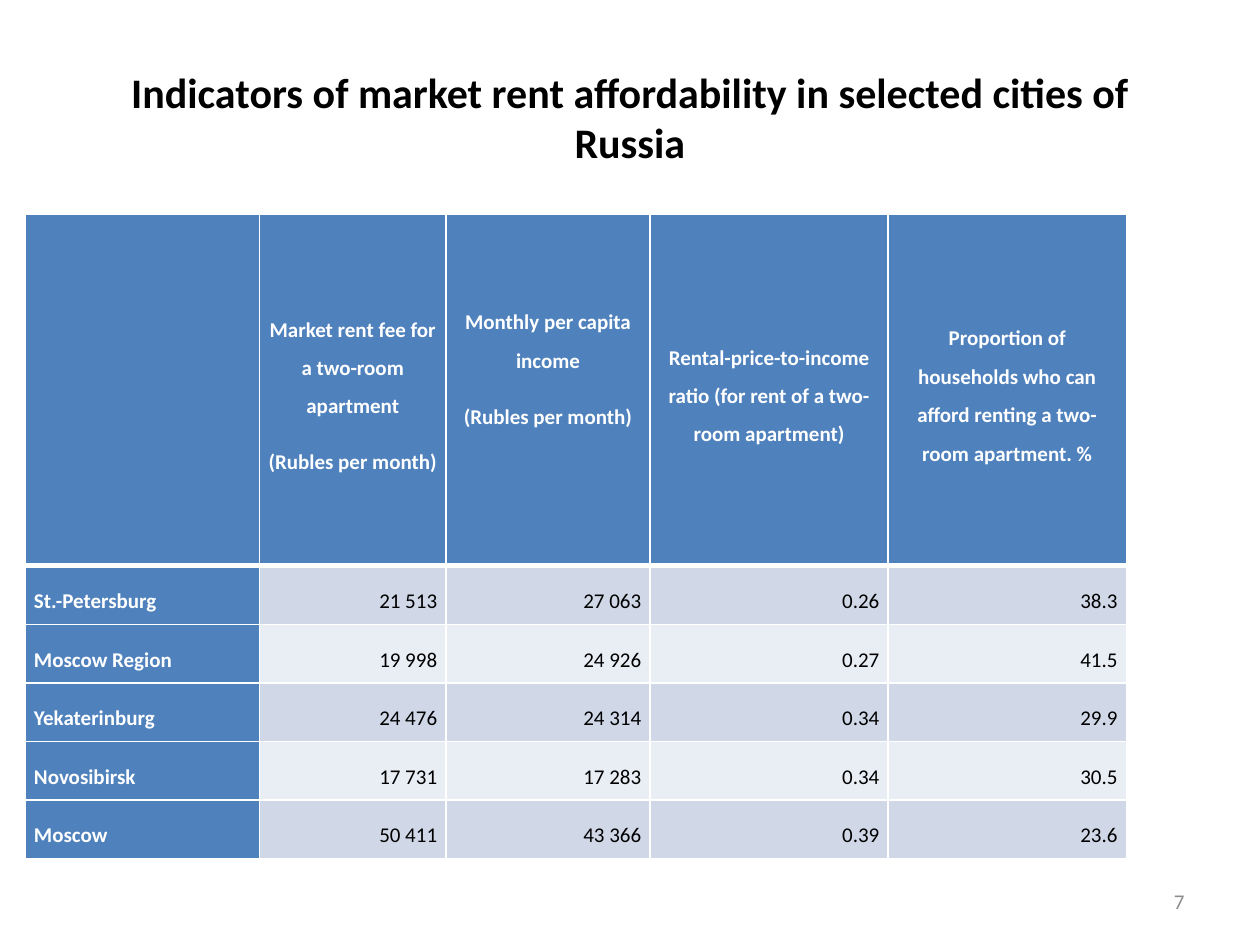
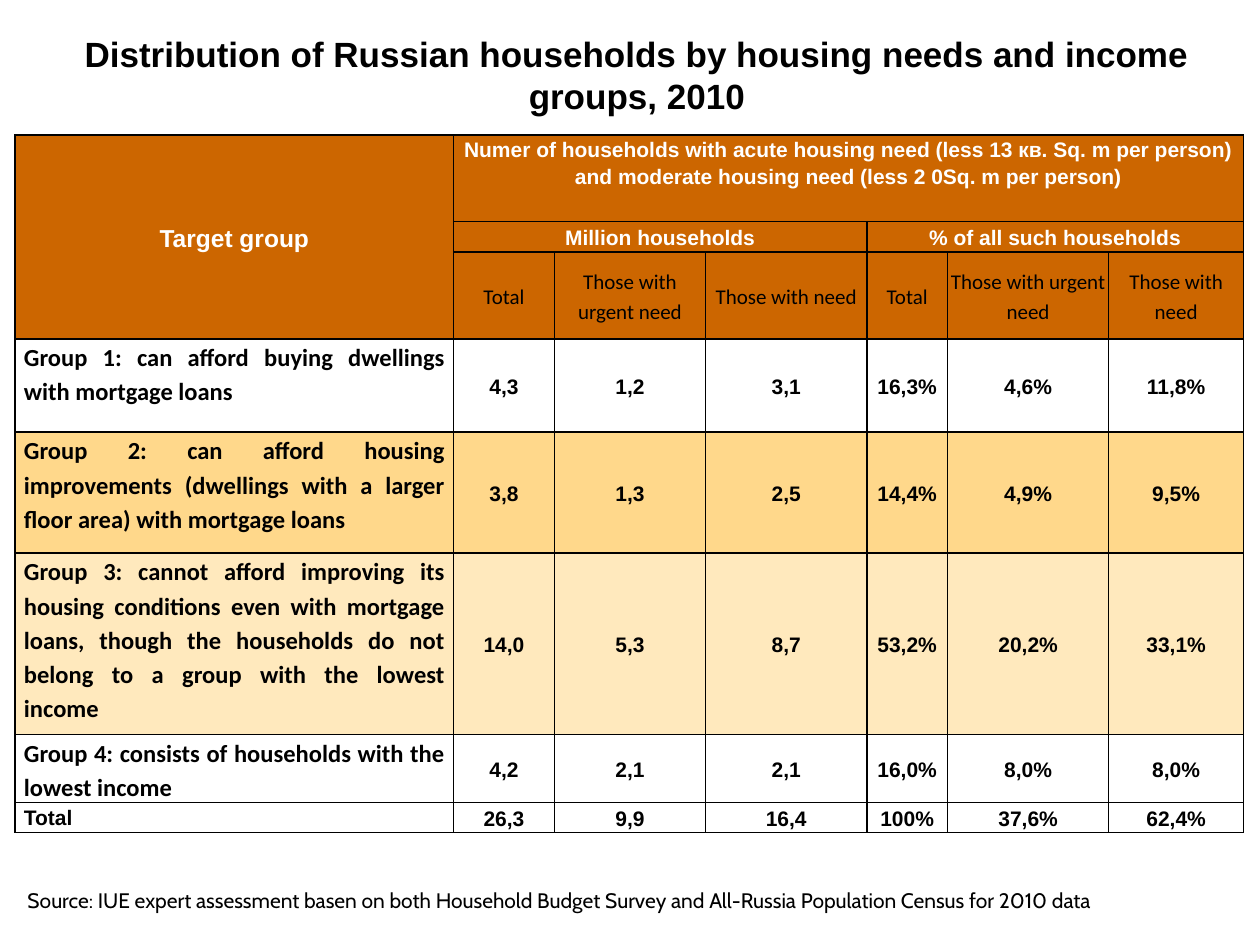
from lxml import etree
from pptx import Presentation
from pptx.dml.color import RGBColor
from pptx.enum import text as t
from pptx.oxml.ns import qn
from pptx.util import Inches, Pt

BLACK = RGBColor(0x00, 0x00, 0x00)
WHITE = RGBColor(0xFF, 0xFF, 0xFF)
GREY = RGBColor(0x8C, 0x8C, 0x8C)
BLUE = RGBColor(0x4F, 0x81, 0xBD)
BLUE_BANDS = RGBColor(0xD0, 0xD8, 0xE8), RGBColor(0xE9, 0xED, 0xF4)
ORANGE = RGBColor(0xCC, 0x66, 0x00)
AMBER = RGBColor(0xFF, 0xD8, 0x8B)
CREAM = RGBColor(0xFF, 0xE9, 0xBD)

LEFT, CENTER = t.PP_ALIGN.LEFT, t.PP_ALIGN.CENTER
RIGHT, JUSTIFY = t.PP_ALIGN.RIGHT, t.PP_ALIGN.JUSTIFY
TOP, MIDDLE = t.MSO_ANCHOR.TOP, t.MSO_ANCHOR.MIDDLE
SIDE_INSETS = (0.07, 0, 0.07, 0)
NO_INSETS = (0, 0, 0, 0)
BOX_INSETS = (0.1, 0.05, 0.1, 0.05)

# Content: rent affordability
RENT_TITLE = "Indicators of market rent affordability in selected cities of Russia"
RENT_PAGE = "7"
RENT_HEADERS = [
    (),
    ("Market rent fee for a two-room apartment", "(Rubles per month)"),
    ("Monthly per capita income", "(Rubles per month)"),
    ("Rental-price-to-income ratio (for rent of a two-room apartment)",),
    ("Proportion of households who can afford renting a two-room apartment. %",),
]
RENT_CITIES = [
    ("St.-Petersburg", "21 513", "27 063", "0.26", "38.3"),
    ("Moscow Region", "19 998", "24 926", "0.27", "41.5"),
    ("Yekaterinburg", "24 476", "24 314", "0.34", "29.9"),
    ("Novosibirsk", "17 731", "17 283", "0.34", "30.5"),
    ("Moscow", "50 411", "43 366", "0.39", "23.6"),
]
RENT_COLUMNS = [1.86, 1.48, 1.62, 1.89, 1.89]
RENT_ROWS = [2.79] + [0.465] * len(RENT_CITIES)

# Content: housing needs
NEEDS_TITLE = ("Distribution of Russian households by housing needs "
               "and income groups, 2010")
NEEDS_CORNER = "Target group"
NEEDS_HEADING = ("Numer of households with acute housing need (less 13 кв. Sq. m per person) "
                 "and moderate housing need (less 2 0Sq. m per person)")
NEEDS_UNITS = ["Million households", "% of all such households"]
NEEDS_MEASURES = ["Total", "Those with urgent need", "Those with need"]
NEEDS_GROUPS = [
    ("Group 1: can afford buying dwellings with mortgage loans", WHITE,
     ["4,3", "1,2", "3,1", "16,3%", "4,6%", "11,8%"]),
    ("Group 2: can afford housing improvements (dwellings with a larger floor area) "
     "with mortgage loans", AMBER,
     ["3,8", "1,3", "2,5", "14,4%", "4,9%", "9,5%"]),
    ("Group 3: cannot afford improving its housing conditions even with mortgage loans, "
     "though the households do not belong to a group with the lowest income", CREAM,
     ["14,0", "5,3", "8,7", "53,2%", "20,2%", "33,1%"]),
    ("Group 4: consists of households with the lowest income", WHITE,
     ["4,2", "2,1", "2,1", "16,0%", "8,0%", "8,0%"]),
    ("Total", WHITE, ["26,3", "9,9", "16,4", "100%", "37,6%", "62,4%"]),
]
NEEDS_COLUMNS = [3.48, 0.8, 1.2, 1.28, 0.64, 1.28, 1.07]
NEEDS_ROWS = [0.69, 0.24, 0.69, 0.74, 0.96, 1.44, 0.54, 0.24]
NEEDS_SOURCE = ("Source: IUE expert assessment basen on both Household Budget Survey "
                "and All-Russia Population Census for 2010 data")


def style(name, size, color=BLACK, bold=False, **paragraph):
    """Font values, plus paragraph values such as alignment."""
    font = {"name": name, "size": Pt(size), "bold": bold}
    return {"font": font, "color": color, "paragraph": paragraph}


RENT_TITLE_STYLE = style("Calibri", 24, bold=True, alignment=CENTER)
PAGE_STYLE = style("Calibri", 12, GREY, alignment=RIGHT)
RENT_HEADER = style("Calibri", 12, WHITE, True, alignment=CENTER,
                    line_spacing=1.5, space_after=Pt(10))
RENT_CITY = style("Calibri", 12, WHITE, True, alignment=LEFT,
                  line_spacing=1.5, space_after=Pt(6))
RENT_VALUE = style("Calibri", 12, alignment=RIGHT, line_spacing=1.5, space_after=Pt(6))

NEEDS_TITLE_STYLE = style("Arial", 20, bold=True, alignment=CENTER)
NEEDS_CORNER_STYLE = style("Arial", 14, WHITE, True, alignment=CENTER, line_spacing=1.15)
NEEDS_HEADER = style("Arial", 12, WHITE, True, alignment=CENTER, line_spacing=1.15)
NEEDS_MEASURE = style("Calibri", 12, alignment=CENTER, line_spacing=1.15)
NEEDS_GROUP = style("Calibri", 14, bold=True, alignment=JUSTIFY, line_spacing=1.15)
NEEDS_TOTAL = style("Arial", 12, bold=True, alignment=JUSTIFY, line_spacing=1.15)
NEEDS_VALUE = style("Arial", 12, bold=True, alignment=CENTER, line_spacing=1.15)
SOURCE_STYLE = style("Cabin", 12, alignment=JUSTIFY)


def write(frame, lines, look):
    for index, line in enumerate(lines):
        paragraph = frame.add_paragraph() if index else frame.paragraphs[0]
        for key, value in look["paragraph"].items():
            setattr(paragraph, key, value)
        run = paragraph.add_run()
        run.text = line
        for key, value in look["font"].items():
            setattr(run.font, key, value)
        run.font.color.rgb = look["color"]


def set_insets(holder, insets):
    for side, inset in zip(("left", "top", "right", "bottom"), insets):
        setattr(holder, f"margin_{side}", Inches(inset))


def add_text(slide, place, line, look, anchor=MIDDLE, insets=BOX_INSETS):
    frame = slide.shapes.add_textbox(*map(Inches, place)).text_frame
    frame.word_wrap = True
    frame.vertical_anchor = anchor
    set_insets(frame, insets)
    write(frame, [line], look)


def add_grid(slide, left, top, columns, rows):
    grid = slide.shapes.add_table(len(rows), len(columns), Inches(left), Inches(top),
                                  Inches(sum(columns)), Inches(sum(rows))).table
    for column, width in zip(grid.columns, columns):
        column.width = Inches(width)
    for row, height in zip(grid.rows, rows):
        row.height = Inches(height)
    return grid


def set_borders(cell, color, widths):
    """Widths in points for left, right, top and bottom."""
    for side, width in zip("LRTB", widths):
        line = etree.SubElement(cell._tc.get_or_add_tcPr(), qn(f"a:ln{side}"),
                                w=str(Pt(width)))
        fill = etree.SubElement(line, qn("a:solidFill"))
        etree.SubElement(fill, qn("a:srgbClr"), val=str(color))


def fill_cell(cell, lines, look, fill, anchor=MIDDLE, insets=SIDE_INSETS):
    cell.fill.solid()
    cell.fill.fore_color.rgb = fill
    cell.vertical_anchor = anchor
    set_insets(cell, insets)
    write(cell.text_frame, lines, look)


def build_rent(slide):
    add_text(slide, (0.5, 0.3, 9, 1.25), RENT_TITLE, RENT_TITLE_STYLE)
    add_text(slide, (7.17, 6.95, 2.33, 0.4), RENT_PAGE, PAGE_STYLE)
    grid = add_grid(slide, 0.2, 1.7, RENT_COLUMNS, RENT_ROWS)
    for r in range(len(RENT_ROWS)):
        for c in range(len(RENT_COLUMNS)):
            # Thick rule between the header and the first city
            set_borders(grid.cell(r, c), WHITE,
                        (1, 1, 3 if r == 1 else 1, 3 if r == 0 else 1))
    for c, lines in enumerate(RENT_HEADERS):
        # The income header sits higher than its neighbours
        insets = (0.07, 0, 0.07, 0.42) if c == 2 else SIDE_INSETS
        fill_cell(grid.cell(0, c), lines, RENT_HEADER, BLUE, insets=insets)
    for r, (city, *values) in enumerate(RENT_CITIES, 1):
        fill_cell(grid.cell(r, 0), [city], RENT_CITY, BLUE)
        for c, value in enumerate(values, 1):
            fill_cell(grid.cell(r, c), [value], RENT_VALUE, BLUE_BANDS[(r - 1) % 2])


def build_needs(slide):
    add_text(slide, (0.12, 0.13, 9.87, 0.92), NEEDS_TITLE, NEEDS_TITLE_STYLE)
    grid = add_grid(slide, 0.12, 1.07, NEEDS_COLUMNS, NEEDS_ROWS)
    for cell in grid.iter_cells():
        set_borders(cell, BLACK, (1, 1, 1, 1))

    # Three header levels
    grid.cell(0, 0).merge(grid.cell(2, 0))
    grid.cell(0, 1).merge(grid.cell(0, 6))
    fill_cell(grid.cell(0, 0), [NEEDS_CORNER], NEEDS_CORNER_STYLE, ORANGE)
    fill_cell(grid.cell(0, 1), [NEEDS_HEADING], NEEDS_HEADER, ORANGE, TOP, NO_INSETS)
    span = len(NEEDS_MEASURES)
    for u, unit in enumerate(NEEDS_UNITS):
        first = 1 + u * span
        grid.cell(1, first).merge(grid.cell(1, first + span - 1))
        fill_cell(grid.cell(1, first), [unit], NEEDS_HEADER, ORANGE)
        for c, measure in enumerate(NEEDS_MEASURES, first):
            fill_cell(grid.cell(2, c), [measure], NEEDS_MEASURE, ORANGE, insets=NO_INSETS)

    # Household groups and the total
    for r, (group, fill, values) in enumerate(NEEDS_GROUPS, 3):
        look = NEEDS_TOTAL if group == "Total" else NEEDS_GROUP
        fill_cell(grid.cell(r, 0), [group], look, fill, TOP)
        for c, value in enumerate(values, 1):
            fill_cell(grid.cell(r, c), [value], NEEDS_VALUE, fill)

    add_text(slide, (0.12, 6.29, 8.94, 1.21), NEEDS_SOURCE, SOURCE_STYLE,
             TOP, (0.1, 0.75, 0.1, 0.05))


def main():
    deck = Presentation()
    deck.slide_width, deck.slide_height = Inches(10), Inches(7.5)
    for build in (build_rent, build_needs):
        build(deck.slides.add_slide(deck.slide_layouts[6]))
    deck.save("out.pptx")


if __name__ == "__main__":
    main()
